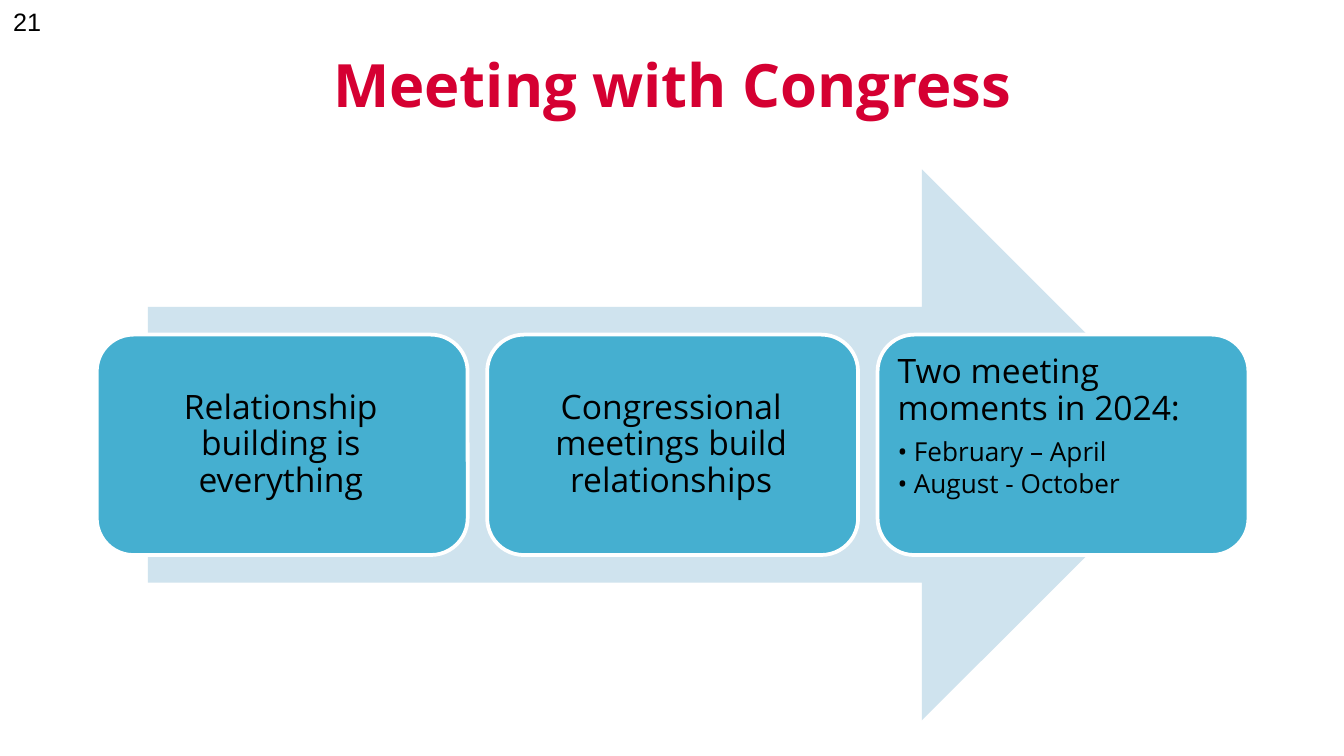
from lxml import etree
from pptx import Presentation
from pptx.dml.color import RGBColor
from pptx.enum.shapes import MSO_SHAPE
from pptx.enum.text import MSO_ANCHOR, PP_ALIGN
from pptx.oxml.ns import qn
from pptx.util import Inches, Pt

ARROW = MSO_SHAPE.RIGHT_ARROW
CARD = MSO_SHAPE.ROUNDED_RECTANGLE
TOP, MIDDLE = MSO_ANCHOR.TOP, MSO_ANCHOR.MIDDLE
LEFT, CENTER = PP_ALIGN.LEFT, PP_ALIGN.CENTER
TITLE_ONLY = 5

RED, BLUE, PALE, WHITE, BLACK = "D50032", "45AFD0", "CFE3EE", "FFFFFF", "000000"
CARDS = [
    ("Relationship building is everything", []),
    ("Congressional meetings build relationships", []),
    ("Two meeting moments in 2024:", ["February – April", "August - October"]),
]


def color(value):
    return RGBColor.from_string(value)


def format_runs(para, size, font="Open Sans", shade=BLACK, bold=False):
    for span in para.runs:
        span.font.size = Pt(size)
        span.font.name = font
        span.font.color.rgb = color(shade)
        span.font.bold = bold


def add_bullet(para):
    para.level = 1
    properties = para._p.get_or_add_pPr()
    properties.set("marL", str(Inches(0.12)))
    properties.set("indent", str(-Inches(0.12)))
    etree.SubElement(properties, qn("a:buFont")).set("typeface", "Open Sans")
    etree.SubElement(properties, qn("a:buChar")).set("char", "•")


def place_title(page, left, top, width, height):
    title = page.shapes.title
    title.left, title.top = Inches(left), Inches(top)
    title.width, title.height = Inches(width), Inches(height)
    frame = title.text_frame
    frame.text = "Meeting with Congress"
    frame.vertical_anchor = MIDDLE
    frame.paragraphs[0].alignment = CENTER
    format_runs(frame.paragraphs[0], 32, shade=RED, bold=True)


def add_page_number(page, left, top, width, height):
    box = page.shapes.add_textbox(Inches(left), Inches(top), Inches(width), Inches(height))
    box.text_frame.word_wrap = True
    box.text_frame.text = "21"
    format_runs(box.text_frame.paragraphs[0], 13.5, font="Arial")


def add_filled_shape(page, kind, left, top, width, height, fill):
    shape = page.shapes.add_shape(kind, Inches(left), Inches(top), Inches(width), Inches(height))
    shape.shadow.inherit = False
    shape.fill.solid()
    shape.fill.fore_color.rgb = color(fill)
    shape.line.fill.background()
    return shape


def add_card(page, left, top, width, height, heading, bullets):
    card = add_filled_shape(page, CARD, left, top, width, height, BLUE)
    card.line.color.rgb = color(WHITE)
    card.line.width = Pt(2)
    frame = card.text_frame
    frame.word_wrap = True
    frame.margin_left = Inches(0.07)
    frame.margin_right = Inches(0.09)
    frame.margin_top = frame.margin_bottom = Inches(0.07)
    frame.vertical_anchor = TOP if bullets else MIDDLE
    frame.text = "\n".join([heading, *bullets])
    for index, para in enumerate(frame.paragraphs):
        size, gap = (14, 2.1) if index else (18, 6.3)
        if index:
            add_bullet(para)
        para.alignment = LEFT if bullets else CENTER
        para.line_spacing = 0.9
        para.space_after = Pt(gap)
        format_runs(para, size)


def add_process(page, left, top, width, height):
    arrow_width = 7.81
    arrow_left = left + (width - arrow_width) / 2
    add_filled_shape(page, ARROW, arrow_left, top, arrow_width, height, PALE)
    card_width, card_height = 2.76, height * 0.4
    step = (width - card_width) / (len(CARDS) - 1)
    card_top = top + (height - card_height) / 2
    for index, (heading, bullets) in enumerate(CARDS):
        add_card(page, left + index * step, card_top, card_width, card_height, heading, bullets)


def main():
    deck = Presentation()
    deck.slide_width, deck.slide_height = Inches(10), Inches(10 * 9 / 16)
    page = deck.slides.add_slide(deck.slide_layouts[TITLE_ONLY])
    add_page_number(page, 0, 0, 0.5, 0.3)
    place_title(page, 1.27, 0.13, 7.47, 0.99)
    add_process(page, 0.72, 1.26, 8.57, 4.1)
    deck.save("out.pptx")


if __name__ == "__main__":
    main()
